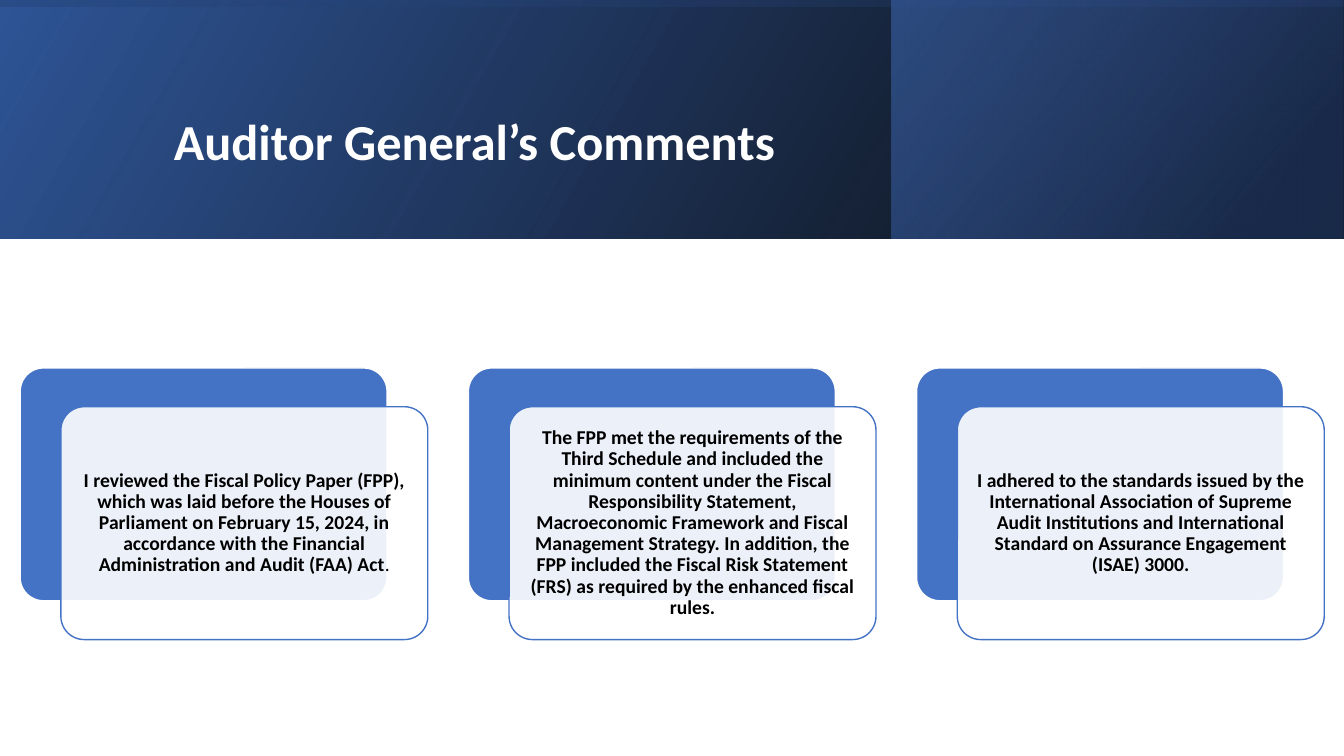
from dataclasses import dataclass

from lxml.etree import SubElement
from pptx import Presentation
from pptx.dml.color import RGBColor
from pptx.enum.shapes import MSO_SHAPE
from pptx.enum.text import MSO_ANCHOR, PP_ALIGN
from pptx.oxml.ns import qn
from pptx.shapes.autoshape import Shape
from pptx.text.text import TextFrame
from pptx.util import Inches, Pt

WHITE = RGBColor(0xFF, 0xFF, 0xFF)
BLACK = RGBColor(0, 0, 0)
NAVY = RGBColor(0x20, 0x38, 0x64)
DEEP = RGBColor(0x2F, 0x55, 0x97)
BLUE = RGBColor(0x44, 0x72, 0xC4)
FONT = "Calibri"

deck = Presentation()
deck.slide_width, deck.slide_height = Inches(13.33), Inches(7.5)
slide = deck.slides.add_slide(deck.slide_layouts[6])


@dataclass
class Box:
    """Left, top, width and height in percent of the slide's size."""
    left: float
    top: float
    wide: float
    high: float

    def place(self) -> list[int]:
        wide, high = deck.slide_width, deck.slide_height
        pairs = ((self.left, wide), (self.top, high), (self.wide, wide), (self.high, high))
        return [round(part * full / 100) for part, full in pairs]

    def shift(self, right: float, down: float) -> "Box":
        return Box(self.left + right, self.top + down, self.wide, self.high)


@dataclass
class Stop:
    place: int
    color: RGBColor
    alpha: int


@dataclass
class Band:
    box: Box
    angle: int
    stops: list[Stop]
    turned: bool = False


HEAD = Box(0, 0, 100, 31.6)
BANDS = [
    Band(HEAD, 330, [Stop(0, BLACK, 96), Stop(100, DEEP, 100)]),
    Band(Box(66.3, 0, 33.65, 31.6), 320, [Stop(19, NAVY, 68), Stop(100, BLUE, 48)]),
    Band(HEAD, 350, [Stop(23, DEEP, 16), Stop(99, BLACK, 45)], turned=True),
]
TITLE = Box(12.2, 13.5, 50, 11.2)
CARD = Box(1.5, 48.67, 27.3, 30.8)
STEP = 33.35
OFFSET = (3.03, 5.13)
# Each card is a list of (text, bold) runs.
CARDS = [
    [("I reviewed the Fiscal Policy Paper (FPP), which was laid before the Houses of "
      "Parliament on February 15, 2024, in accordance with the Financial "
      "Administration and Audit (FAA) Act", True), (".", False)],
    [("The FPP met the requirements of the Third Schedule and included the minimum "
      "content under the Fiscal Responsibility Statement, Macroeconomic Framework and "
      "Fiscal Management Strategy. In addition, the FPP included the Fiscal Risk "
      "Statement (FRS) as required by the enhanced fiscal rules.", True)],
    [("I adhered to the standards issued by the International Association of Supreme "
      "Audit Institutions and International Standard on Assurance Engagement "
      "(ISAE) 3000.", True)],
]


def add_alpha(color, share: int) -> None:
    SubElement(color, qn("a:alpha"), val=str(share * 1000))


def draw_band(band: Band) -> None:
    left, top, wide, high = band.box.place()
    if band.turned:
        left, top = left + (wide - high) // 2, top + (high - wide) // 2
        wide, high = high, wide
    shape = slide.shapes.add_shape(MSO_SHAPE.RECTANGLE, left, top, wide, high)
    shape.shadow.inherit = False
    shape.line.fill.background()
    shape.rotation = 270 if band.turned else 0
    shape._element.spPr.find(qn("a:xfrm")).set("flipH", "1")
    shape.fill.gradient()
    grad = shape._element.spPr.find(qn("a:gradFill"))
    stops = grad.find(qn("a:gsLst"))
    for old in list(stops):
        stops.remove(old)
    for stop in band.stops:
        node = SubElement(stops, qn("a:gs"), pos=str(stop.place * 1000))
        add_alpha(SubElement(node, qn("a:srgbClr"), val=str(stop.color)), stop.alpha)
    grad.find(qn("a:lin")).set("ang", str(band.angle * 60000))


def write(frame: TextFrame, runs: list[tuple[str, bool]], size: int,
          color: RGBColor, align: PP_ALIGN, inset: float) -> None:
    pad = Inches(inset)
    style = {"word_wrap": True, "vertical_anchor": MSO_ANCHOR.MIDDLE,
             "margin_left": pad, "margin_right": pad,
             "margin_top": pad, "margin_bottom": pad}
    for name, value in style.items():
        setattr(frame, name, value)
    para = frame.paragraphs[0]
    para.alignment, para.line_spacing = align, 0.9
    for text, bold in runs:
        run = para.add_run()
        run.text = text
        for name, value in {"name": FONT, "size": Pt(size), "bold": bold}.items():
            setattr(run.font, name, value)
        run.font.color.rgb = color


def draw_card(box: Box, fill: RGBColor, line: RGBColor) -> Shape:
    shape = slide.shapes.add_shape(MSO_SHAPE.ROUNDED_RECTANGLE, *box.place())
    shape.adjustments[0] = 0.1
    shape.shadow.inherit = False
    shape.fill.solid()
    shape.fill.fore_color.rgb = fill
    shape.line.color.rgb = line
    shape.line.width = Pt(1)
    return shape


for band in BANDS:
    draw_band(band)
title = slide.shapes.add_textbox(*TITLE.place())
write(title.text_frame, [("Auditor General’s Comments", True)], 36, WHITE, PP_ALIGN.LEFT, 0.1)
for col, runs in enumerate(CARDS):
    back = CARD.shift(col * STEP, 0)
    draw_card(back, BLUE, WHITE)
    front = draw_card(back.shift(*OFFSET), WHITE, BLUE)
    add_alpha(front._element.spPr.find(qn("a:solidFill"))[0], 90)
    write(front.text_frame, runs, 14, BLACK, PP_ALIGN.CENTER, 0.06)

deck.save("out.pptx")
